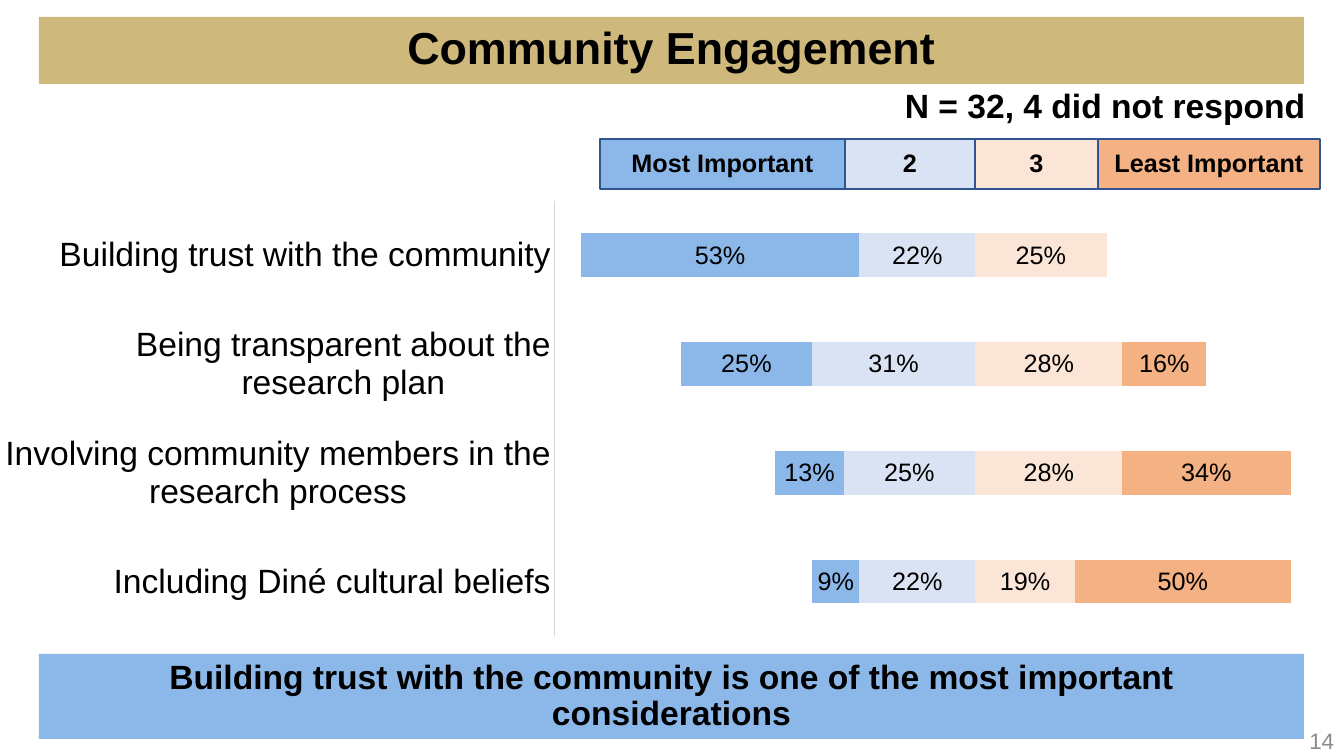
"""Build the Community Engagement survey slide."""
import pptx
import pptx.util
import pptx.chart.data
import pptx.dml.color
import pptx.enum.chart
import pptx.enum.shapes
import pptx.enum.text
import pptx.oxml

PX = 914400 / 100.8
BLACK, GOLD, BLUE = "000000", "CFB87C", "8BB8E8"
PALE_BLUE, PALE_ORANGE, ORANGE = "DAE3F3", "FBE5D6", "F4B183"
ALIGN = pptx.enum.text.PP_ALIGN


def rgb(value):
    return pptx.dml.color.RGBColor.from_string(value)


def add_text(box, text, size, fill=None, line=None, align=ALIGN.CENTER, color=BLACK, bold=True):
    place = [round(v * PX) for v in box]
    if fill:
        shape = slide.shapes.add_shape(pptx.enum.shapes.MSO_SHAPE.RECTANGLE, *place)
        shape.shadow.inherit = False
        shape.fill.solid()
        shape.fill.fore_color.rgb = rgb(fill)
        if line:
            shape.line.color.rgb = rgb(line)
            shape.line.width = pptx.util.Pt(1)
        else:
            shape.line.fill.background()
    else:
        shape = slide.shapes.add_textbox(*place)
    frame = shape.text_frame
    frame.text = text
    frame.word_wrap = True
    frame.vertical_anchor = pptx.enum.text.MSO_ANCHOR.MIDDLE
    paragraph = frame.paragraphs[0]
    paragraph.alignment = align
    paragraph.line_spacing = 0.9 if fill else 1.0
    font = paragraph.runs[0].font
    font.name, font.size, font.bold = "Arial", pptx.util.Pt(size), bold
    font.color.rgb = rgb(color)
    return shape


prs = pptx.Presentation()
prs.slide_width, prs.slide_height = round(1344 * PX), round(756 * PX)
slide = prs.slides.add_slide(prs.slide_layouts[6])

add_text((39, 17, 1265, 67), "Community Engagement", 32, GOLD)
add_text((39, 654, 1265, 85),
         "Building trust with the community is one of the most important considerations", 24, BLUE)
respondents = add_text((895, 80, 424, 50), "N = 32, 4 did not respond", 24, align=ALIGN.LEFT)
respondents.text_frame.word_wrap = False

ratings = pptx.chart.data.CategoryChartData(number_format="0%")
ratings.categories = [
    "Including Diné cultural beliefs",
    "Involving community members in the research process",
    "Being transparent about the research plan",
    "Building trust with the community",
]
series_rows = [
    ((0.69, 0.62, 0.44, 0.25), None),
    ((0.09, 0.13, 0.25, 0.53), BLUE),
    ((0.22, 0.25, 0.31, 0.22), PALE_BLUE),
    ((0.19, 0.28, 0.28, 0.25), PALE_ORANGE),
    ((0.5, 0.34, 0.16, 0), ORANGE),
    ((0.31, 0.38, 0.56, 0.75), "FFFFFF"),
]
for number, (values, _) in enumerate(series_rows, 1):
    ratings.add_series(f"Series {number}", values)

chart = slide.shapes.add_chart(
    pptx.enum.chart.XL_CHART_TYPE.BAR_STACKED_100,
    *[round(v * PX) for v in (0, 185, 1305, 467)], ratings).chart
chart.has_legend = False
chart.has_title = False
chart.font.name, chart.font.size = "Arial", pptx.util.Pt(18)
chart.font.color.rgb = rgb(BLACK)

topics = chart.category_axis
topics.major_tick_mark = pptx.enum.chart.XL_TICK_MARK.NONE
topics.tick_labels.font.name = "Arial"
topics.tick_labels.font.size = pptx.util.Pt(24)
topics.tick_labels.font.color.rgb = rgb(BLACK)
topics.format.line.color.rgb = rgb("D9D9D9")
topics.format.line.width = pptx.util.Pt(0.75)
share = chart.value_axis
share.minimum_scale, share.maximum_scale = 0.1, 0.8
share.has_major_gridlines = False
share.visible = False

plot = chart.plots[0]
plot.gap_width, plot.overlap = 150, 100
plot.vary_by_categories = False
for series, (_, fill) in zip(plot.series, series_rows):
    if fill is None:
        series.format.fill.background()
        continue
    series.format.fill.solid()
    series.format.fill.fore_color.rgb = rgb(fill)
    if fill == "FFFFFF":
        continue
    labels = series.data_labels
    labels.show_value = True
    labels.number_format, labels.number_format_is_linked = "0%;;", False
    labels.position = pptx.enum.chart.XL_LABEL_POSITION.CENTER
    labels.font.name, labels.font.size = "Arial", pptx.util.Pt(18)
    labels.font.color.rgb = rgb(BLACK)

plot_area = chart.element.chart.plotArea
for old_layout in plot_area.findall(pptx.oxml.ns.qn("c:layout")):
    plot_area.remove(old_layout)
plot_area.insert(0, pptx.oxml.parse_xml(
    '<c:layout xmlns:c="http://schemas.openxmlformats.org/drawingml/2006/chart"><c:manualLayout>'
    '<c:layoutTarget val="inner"/><c:xMode val="edge"/><c:yMode val="edge"/>'
    '<c:x val="0.425"/><c:y val="0.034"/><c:w val="0.564"/><c:h val="0.932"/>'
    '</c:manualLayout></c:layout>'))

add_text((1041, 721, 303, 40), "14", 16, align=ALIGN.RIGHT, color="8C8C8C", bold=False)

legend = [("Most Important", 245, BLUE), ("2", 130, PALE_BLUE),
          ("3", 123, PALE_ORANGE), ("Least Important", 222, ORANGE)]
left = 600
for rating, width, fill in legend:
    add_text((left, 139, width, 50), rating, 18, fill, "325491")
    left += width

prs.save("out.pptx")
